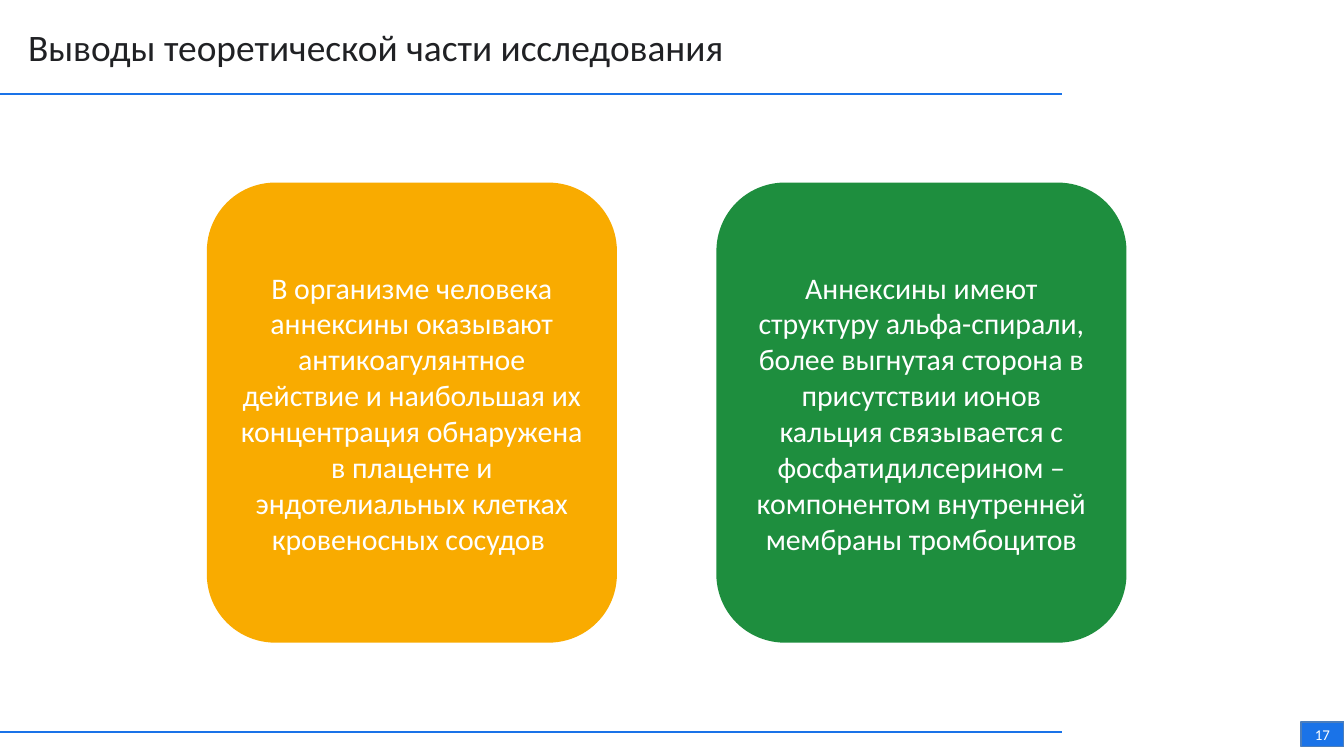
import pptx
import pptx.util
import pptx.dml.color
import pptx.enum.shapes
import pptx.enum.text
import pptx.oxml.ns
import lxml.etree

Cm, Pt = pptx.util.Cm, pptx.util.Pt
Shape = pptx.enum.shapes.MSO_SHAPE
Align = pptx.enum.text.PP_ALIGN
Anchor = pptx.enum.text.MSO_ANCHOR

# Content
TITLE = "Выводы теоретической части исследования"
PAGE = "17"
CARDS = [
    ("В организме человека аннексины оказывают антикоагулянтное действие "
     "и наибольшая их концентрация обнаружена в плаценте и эндотелиальных "
     "клетках кровеносных сосудов ", "amber"),
    ("Аннексины имеют структуру альфа-спирали, более выгнутая сторона "
     "в присутствии ионов кальция связывается с фосфатидилсерином – "
     "компонентом внутренней мембраны тромбоцитов", "green"),
]

# Theme and layout (lengths in cm)
THEME = {
    "font": "Calibri",
    "size": {"title": 20, "card": 16, "page": 8},
    "color": {"ink": "202124", "white": "FFFFFF", "amber": "F9AB00",
              "green": "1E8E3E", "blue": "1A73E8", "edge": "4B7EBC"},
}
WIDE, HIGH = 25.4, 14.28
CARD_X, CARD_Y, CARD_W, CARD_H, GAP = 3.91, 3.45, 7.75, 8.69, 1.88
RULES, RULE_W = (1.78, 13.82), 20.07
TAG_W, TAG_H, TAG_Y = 0.81, 0.46, 13.64


def color(name):
    return pptx.dml.color.RGBColor.from_string(THEME["color"][name])


def write(shape, text, role, ink, align, anchor, inset=None):
    frame = shape.text_frame
    frame.text = text
    frame.word_wrap = True
    frame.auto_size = pptx.enum.text.MSO_AUTO_SIZE.NONE
    frame.vertical_anchor = anchor
    if inset is not None:
        frame.margin_left = frame.margin_right = Cm(inset)
        frame.margin_top = frame.margin_bottom = Cm(inset)
    par = frame.paragraphs[0]
    par.alignment = align
    par.font.name = THEME["font"]
    par.font.size = Pt(THEME["size"][role])
    par.font.color.rgb = color(ink)


def add_box(slide, kind, box, fill):
    shape = slide.shapes.add_shape(kind, *map(Cm, box))
    shape.shadow.inherit = False
    shape.fill.solid()
    shape.fill.fore_color.rgb = color(fill)
    shape.line.fill.background()
    return shape


def add_rule(slide, y):
    rule = slide.shapes.add_connector(
        pptx.enum.shapes.MSO_CONNECTOR.STRAIGHT, 0, Cm(y), Cm(RULE_W), Cm(y))
    rule.line.color.rgb = color("blue")
    rule.line.width = Pt(1)
    lxml.etree.SubElement(rule._element.spPr, pptx.oxml.ns.qn("a:effectLst"))


def main():
    deck = pptx.Presentation()
    deck.slide_width, deck.slide_height = Cm(WIDE), Cm(HIGH)
    slide = deck.slides.add_slide(deck.slide_layouts[5])

    # Title
    title = slide.shapes.title
    title.left, title.top = Cm(0.28), Cm(0.2)
    title.width, title.height = Cm(16.81), Cm(1.58)
    write(title, TITLE, "title", "ink", Align.LEFT, Anchor.TOP, 0.25)

    # Cards
    for i, (text, fill) in enumerate(CARDS):
        x = CARD_X + i * (CARD_W + GAP)
        card = add_box(slide, Shape.ROUNDED_RECTANGLE,
                       (x, CARD_Y, CARD_W, CARD_H), fill)
        write(card, text, "card", "white", Align.CENTER, Anchor.MIDDLE)

    # Rules
    for y in RULES:
        add_rule(slide, y)

    # Page number
    tag = add_box(slide, Shape.RECTANGLE,
                  (WIDE - TAG_W, TAG_Y, TAG_W, TAG_H), "blue")
    tag.line.color.rgb = color("edge")
    tag.line.width = Pt(0.75)
    write(tag, PAGE, "page", "white", Align.CENTER, Anchor.MIDDLE, 0)

    deck.save("out.pptx")


if __name__ == "__main__":
    main()
